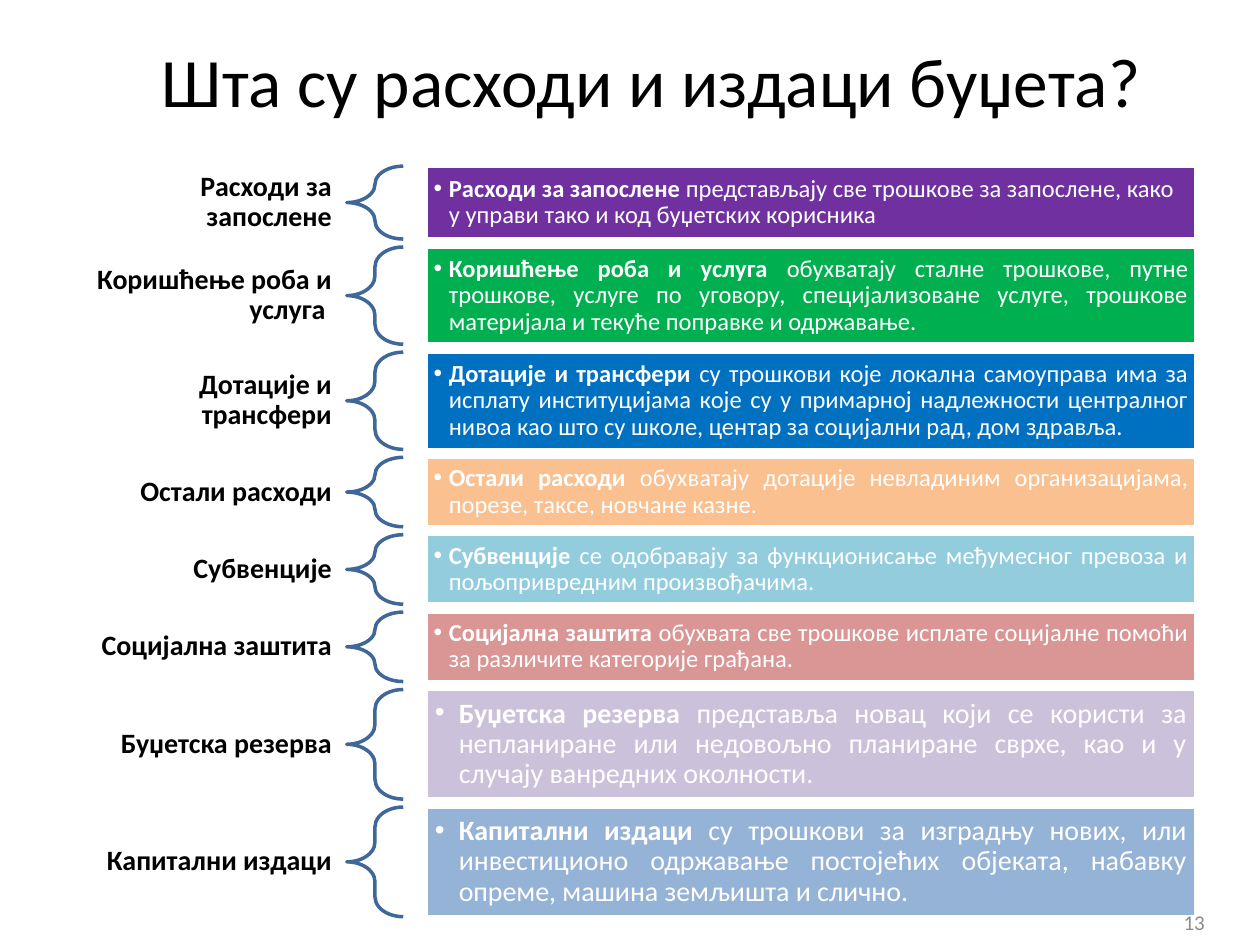
from dataclasses import dataclass

from lxml import etree
from pptx import Presentation
from pptx.dml.color import RGBColor
from pptx.enum.shapes import MSO_SHAPE
from pptx.enum.text import MSO_ANCHOR, MSO_AUTO_SIZE, PP_ALIGN
from pptx.oxml.ns import qn
from pptx.util import Cm, Pt

BRACE, RECTANGLE = MSO_SHAPE.LEFT_BRACE, MSO_SHAPE.RECTANGLE
LEFT, RIGHT, CENTER, JUSTIFY = PP_ALIGN.LEFT, PP_ALIGN.RIGHT, PP_ALIGN.CENTER, PP_ALIGN.JUSTIFY
MIDDLE, FIXED_SIZE = MSO_ANCHOR.MIDDLE, MSO_AUTO_SIZE.NONE
TITLE_ONLY = 5


@dataclass(frozen=True)
class Theme:
    font: str = "Calibri"
    ink: str = "000000"
    paper: str = "FFFFFF"
    brace: str = "3F6797"
    muted: str = "8C8C8C"
    title_size: float = 39.6
    label_size: float = 16
    number_size: float = 12
    line_width: float = 2
    line_spacing: float = 0.9


@dataclass(frozen=True)
class Box:
    left: float
    top: float
    width: float
    height: float

    def lengths(self):
        return Cm(self.left), Cm(self.top), Cm(self.width), Cm(self.height)


@dataclass(frozen=True)
class Expense:
    label: str
    description: str
    fill: str
    height: float
    label_height: float = 0.89
    align: PP_ALIGN = JUSTIFY
    size: float = 14
    inset: float = 0.15
    indent: float = 0.31


THEME = Theme()
LARGE = {"size": 16, "inset": 0.18, "indent": 0.48}
ROW_GAP = 0.16

EXPENSES = [
    Expense("Расходи за запослене",
            " представљају све трошкове за запослене, како у управи тако и код буџетских корисника",
            "7030A0", 1.47, 1.47, LEFT),
    Expense("Коришћење роба и услуга ",
            "обухватају сталне трошкове, путне трошкове, услуге по уговору, специјализоване "
            "услуге, трошкове материјала и текуће поправке и одржавање.",
            "00B050", 1.96, 1.47),
    Expense("Дотације и трансфери",
            " су трошкови које локална самоуправа има за исплату институцијама које су у "
            "примарној надлежности централног нивоа као што су школе, центар за социјални "
            "рад, дом здравља.",
            "0070C0", 1.96, 1.47),
    Expense("Остали расходи",
            " обухватају дотације невладиним организацијама, порезе, таксе, новчане казне.",
            "FAC090", 1.4),
    Expense("Субвенције",
            " сe одобравају за функционисање међумесног превоза и пољопривредним произвођачима.",
            "93CDDD", 1.4),
    Expense("Социјална заштита",
            " обухвата све трошкове исплате социјалне помоћи за различите категорије грађана.",
            "D99694", 1.4),
    Expense("Буџетска резерва",
            " представља новац који се користи за непланиране или недовољно планиране сврхе, "
            "као и у случају ванредних околности.",
            "CCC1DA", 2.21, **LARGE),
    Expense("Капитални издаци",
            " су трошкови за изградњу нових, или инвестиционо одржавање постојећих објеката, "
            "набавку опреме, машина земљишта и слично.",
            "95B3D7", 2.21, **LARGE),
]


def format_span(span, size, color, bold=False):
    span.font.name = THEME.font
    span.font.size = Pt(size)
    span.font.bold = bold
    span.font.color.rgb = RGBColor.from_string(color)


def set_frame(frame, horizontal=0.25, vertical=0.13):
    frame.word_wrap = True
    frame.auto_size = FIXED_SIZE
    frame.vertical_anchor = MIDDLE
    frame.margin_left = frame.margin_right = Cm(horizontal)
    frame.margin_top = frame.margin_bottom = Cm(vertical)


def set_line(shape, color):
    shape.shadow.inherit = False
    shape.line.color.rgb = RGBColor.from_string(color)
    shape.line.width = Pt(THEME.line_width)


def add_bullet(para, indent):
    properties = para._p.get_or_add_pPr()
    properties.set("marL", str(Cm(indent)))
    properties.set("indent", str(-Cm(indent)))
    etree.SubElement(properties, qn("a:buFont")).set("typeface", "Arial")
    etree.SubElement(properties, qn("a:buChar")).set("char", "•")


def add_title(page, box, text):
    title = page.shapes.title
    title.left, title.top, title.width, title.height = box.lengths()
    set_frame(title.text_frame)
    title.text_frame.text = text
    para = title.text_frame.paragraphs[0]
    para.alignment = CENTER
    format_span(para.runs[0], THEME.title_size, THEME.ink)


def add_text(page, box, text, size, color, bold=False, horizontal=0.25, vertical=0.13):
    frame = page.shapes.add_textbox(*box.lengths()).text_frame
    set_frame(frame, horizontal, vertical)
    frame.text = text
    para = frame.paragraphs[0]
    para.alignment = RIGHT
    format_span(para.runs[0], size, color, bold)
    return para


def add_expense_row(page, box, expense):
    # Label, centred on the row
    label_top = box.top + (box.height - expense.label_height) / 2
    label_box = Box(box.left, label_top, 5.72, expense.label_height)
    label = add_text(page, label_box, expense.label, THEME.label_size, THEME.ink,
                     bold=True, horizontal=0.3, vertical=0.1)
    label.line_spacing = THEME.line_spacing

    # Brace
    brace_box = Box(box.left + 5.72, box.top, 1.14, box.height)
    brace = page.shapes.add_shape(BRACE, *brace_box.lengths())
    brace.adjustments[0] = 0.35
    brace.fill.background()
    set_line(brace, THEME.brace)

    # Coloured description
    panel_offset = 7.32
    panel_box = Box(box.left + panel_offset, box.top, box.width - panel_offset, box.height)
    panel = page.shapes.add_shape(RECTANGLE, *panel_box.lengths())
    panel.fill.solid()
    panel.fill.fore_color.rgb = RGBColor.from_string(expense.fill)
    set_line(panel, THEME.paper)
    set_frame(panel.text_frame, expense.inset, expense.inset)
    para = panel.text_frame.paragraphs[0]
    para.level = 1
    para.alignment = expense.align
    para.line_spacing = THEME.line_spacing
    add_bullet(para, expense.indent)
    for text, bold in ((expense.label, True), (expense.description, False)):
        span = para.add_run()
        span.text = text
        format_span(span, expense.size, THEME.paper, bold)


def add_expense_list(page, box, expenses):
    top = box.top
    for expense in expenses:
        add_expense_row(page, Box(box.left, top, box.width, expense.height), expense)
        top += expense.height + ROW_GAP


def main():
    deck = Presentation()
    deck.slide_width, deck.slide_height = Cm(25.4), Cm(19.05)
    page = deck.slides.add_slide(deck.slide_layouts[TITLE_ONLY])
    add_title(page, Box(1.7, 0.74, 22.86, 1.73), "Шта су расходи и издаци буџета?")
    add_expense_list(page, Box(1.27, 3.35, 22.84, 15.12), EXPENSES)
    add_text(page, Box(18.62, 18.08, 5.92, 1.02), "13", THEME.number_size, THEME.muted)
    deck.save("out.pptx")


if __name__ == "__main__":
    main()
